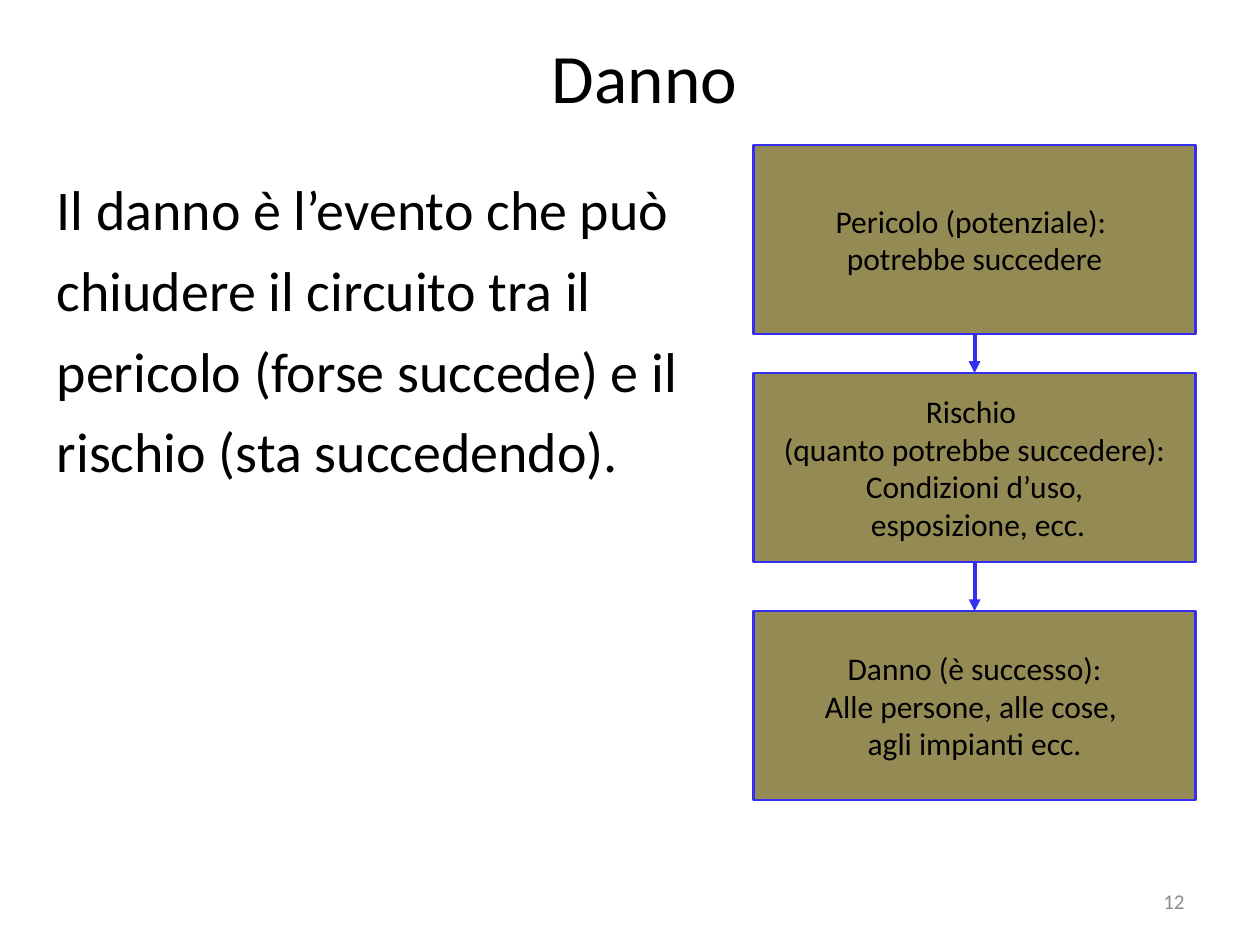
import pptx
import pptx.dml.color
import pptx.enum.shapes
import pptx.enum.text
import pptx.oxml
import pptx.oxml.ns
import pptx.util
from pptx.util import Inches

BLACK = pptx.dml.color.RGBColor(0x00, 0x00, 0x00)
GREY = pptx.dml.color.RGBColor(0x8C, 0x8C, 0x8C)
OLIVE = pptx.dml.color.RGBColor(0x94, 0x8A, 0x54)
BLUE = pptx.dml.color.RGBColor(0x36, 0x2D, 0xF3)
ALIGN = pptx.enum.text.PP_ALIGN
MIDDLE = pptx.enum.text.MSO_ANCHOR.MIDDLE
TOP = pptx.enum.text.MSO_ANCHOR.TOP

BODY = ("Il danno è l’evento che può chiudere il circuito tra il pericolo "
        "(forse succede) e il rischio (sta succedendo).")
STEPS = [
    (1.15, "Pericolo (potenziale): \npotrebbe succedere"),
    (2.96, "Rischio \n(quanto potrebbe succedere):\nCondizioni d’uso,\n esposizione, ecc."),
    (4.85, "Danno (è successo):\nAlle persone, alle cose, \nagli impianti ecc."),
]


def set_values(target, values):
    for name, value in values.items():
        setattr(target, name, value)


def place(shape, box):
    names = ("left", "top", "width", "height")
    set_values(shape, dict(zip(names, map(Inches, box))))


def write(shape, text, size, align, color=BLACK, anchor=MIDDLE, wrap=True):
    """Fill the shape with one formatted paragraph; newlines become line breaks."""
    frame = shape.text_frame
    set_values(frame, {"auto_size": pptx.enum.text.MSO_AUTO_SIZE.NONE,
                       "word_wrap": wrap, "vertical_anchor": anchor})
    para = frame.paragraphs[0]
    para.text = text
    para.alignment = align
    for span in para.runs:
        set_values(span.font, {"name": "Calibri", "size": pptx.util.Pt(size)})
        span.font.color.rgb = color
    return para


def add_title(page, box):
    place(page.shapes.title, box)
    write(page.shapes.title, "Danno", 39.6, ALIGN.CENTER)


def add_body(page, box):
    body = page.placeholders[1]
    place(body, box)
    para = write(body, BODY, 32, ALIGN.LEFT, anchor=TOP)
    set_values(para, {"line_spacing": 1.2, "space_before": pptx.util.Pt(0)})
    properties = para._p.get_or_add_pPr()
    set_values(properties, {"marL": 0, "indent": 0})
    properties.set("marL", "0")
    properties.set("indent", "0")
    properties.append(pptx.oxml.parse_xml(
        f"<a:buNone {pptx.oxml.ns.nsdecls('a')}/>"))


def add_page_number(page, box):
    number = page.shapes.add_textbox(*map(Inches, box))
    write(number, "12", 12, ALIGN.RIGHT, GREY)


def add_step(page, box, text):
    step = page.shapes.add_shape(
        pptx.enum.shapes.MSO_SHAPE.FLOWCHART_PROCESS, *map(Inches, box))
    step.shadow.inherit = False
    step.fill.solid()
    step.fill.fore_color.rgb = OLIVE
    step.line.color.rgb = BLUE
    step.line.width = pptx.util.Pt(1.5)
    write(step, text, 18, ALIGN.CENTER, wrap=False)
    return step


def add_arrow(page, upper, lower):
    arrow = page.shapes.add_connector(
        pptx.enum.shapes.MSO_CONNECTOR.STRAIGHT, 0, 0, 0, 0)
    arrow.begin_connect(upper, 2)
    arrow.end_connect(lower, 0)
    arrow.line.color.rgb = BLUE
    arrow.line.width = pptx.util.Pt(2.25)
    namespace = pptx.oxml.ns.nsdecls("a")
    arrow.line._get_or_add_ln().append(
        pptx.oxml.parse_xml(f'<a:tailEnd {namespace} type="triangle"/>'))
    arrow._element.spPr.append(pptx.oxml.parse_xml(f"<a:effectLst {namespace}/>"))


def add_flow(page, left, width, height):
    steps = [add_step(page, (left, top, width, height), text) for top, text in STEPS]
    for upper, lower in zip(steps, steps[1:]):
        add_arrow(page, upper, lower)


def main():
    deck = pptx.Presentation()
    set_values(deck, {"slide_width": Inches(10), "slide_height": Inches(7.5)})
    page = deck.slides.add_slide(deck.slide_layouts[1])
    add_title(page, (0.51, 0.28, 9.21, 0.65))
    add_body(page, (0.35, 1.23, 5.2, 5.35))
    add_page_number(page, (7.17, 6.95, 2.33, 0.4))
    add_flow(page, 5.98, 3.51, 1.5)
    deck.save("out.pptx")


if __name__ == "__main__":
    main()
